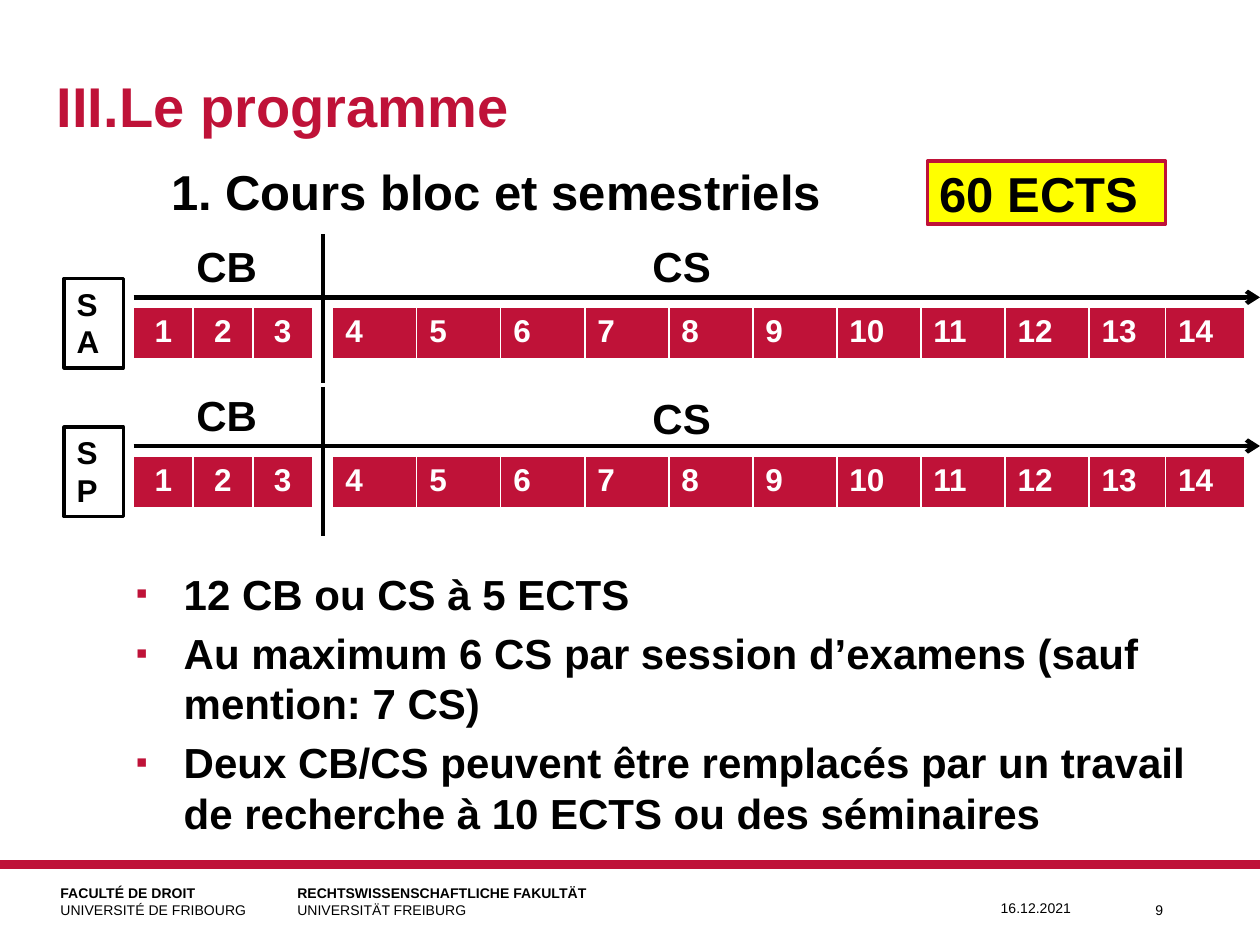
from lxml import etree
from pptx import Presentation
from pptx import util as u
from pptx.dml import color
from pptx.enum import shapes, text
from pptx.oxml import ns

RED, BLACK, WHITE, YELLOW = "BF1238", "000000", "FFFFFF", "FFFF00"


def rgb(value):
    return color.RGBColor.from_string(value)


def box(at):
    return [u.Inches(length) for length in at]


def add_child(parent, tag, **attributes):
    return etree.SubElement(parent, ns.qn(tag), **attributes)


def set_font(font, size, bold=True, ink=BLACK):
    font.name, font.size, font.bold = "Arial", u.Pt(size), bold
    font.color.rgb = rgb(ink)


def write(frame, words, size, bold=True, ink=BLACK,
          align=text.PP_ALIGN.LEFT, anchor=text.MSO_ANCHOR.TOP):
    frame.word_wrap = True
    frame.auto_size = text.MSO_AUTO_SIZE.NONE
    frame.vertical_anchor = anchor
    paragraph = frame.paragraphs[0]
    paragraph.text = words
    paragraph.alignment = align
    set_font(paragraph.font, size, bold, ink)


def add_text(slide, at, words, size, **style):
    shape = slide.shapes.add_textbox(*box(at))
    write(shape.text_frame, words, size, **style)


def add_box(slide, at, words, size, fill, line, **style):
    shape = slide.shapes.add_shape(shapes.MSO_SHAPE.RECTANGLE, *box(at))
    shape.shadow.inherit = False
    shape.fill.solid()
    shape.fill.fore_color.rgb = rgb(fill)
    shape.line.color.rgb = rgb(line)
    shape.line.width = u.Pt(2)
    write(shape.text_frame, words, size, **style)


def add_line(slide, start, end, width, ink=BLACK, arrow=False):
    line = slide.shapes.add_connector(
        shapes.MSO_CONNECTOR.STRAIGHT, *box(start + end))
    line.line.color.rgb = rgb(ink)
    line.line.width = u.Pt(width)
    if arrow:
        add_child(line.line._get_or_add_ln(), "a:tailEnd", type="arrow")
    add_child(line._element.spPr, "a:effectLst")


def add_weeks(slide, at, weeks, align=text.PP_ALIGN.LEFT):
    """Add a one-row table of week numbers."""
    table = slide.shapes.add_table(1, len(weeks), *box(at)).table
    for column, week in enumerate(weeks):
        cell = table.cell(0, column)
        cell.fill.solid()
        cell.fill.fore_color.rgb = rgb(RED)
        paragraph = cell.text_frame.paragraphs[0]
        paragraph.text = str(week)
        paragraph.alignment = align
        set_font(paragraph.font, 18, ink=WHITE)


def add_semester(slide, name, top, divider_top):
    """Add a time line: block courses left of the divider, semester courses right."""
    axis, weeks_top = top + 0.5, top + 0.58
    add_box(slide, (0.51, top + 0.35, 0.47, 0.71), name, 18, WHITE, BLACK)
    add_weeks(slide, (1.06, weeks_top, 1.42, 0.41), range(1, 4),
              text.PP_ALIGN.CENTER)
    add_weeks(slide, (2.64, weeks_top, 6.67, 0.41), range(4, 14))
    add_weeks(slide, (9.25, weeks_top, 0.63, 0.41), [14])
    add_text(slide, (1.46, top, 1.02, 0.5), "CB", 24)
    add_text(slide, (5.08, divider_top, 0.71, 0.5), "CS", 24)
    add_line(slide, (1.06, axis), (10, axis), 2.5, arrow=True)
    add_line(slide, (2.56, divider_top), (2.56, divider_top + 1.18), 2.25)


def add_bullet(slide, at, words):
    frame = slide.shapes.add_textbox(*box(at)).text_frame
    properties = frame.paragraphs[0]._p.get_or_add_pPr()
    indent = u.Inches(0.38)
    properties.set("marL", str(indent))
    properties.set("indent", str(-indent))
    add_child(add_child(properties, "a:buClr"), "a:srgbClr", val=RED)
    add_child(properties, "a:buSzPct", val="80000")
    add_child(properties, "a:buFont", typeface="Arial")
    add_child(properties, "a:buChar", char="▪")
    write(frame, words, 24)


def add_institution(slide, at, faculty, university):
    frame = slide.shapes.add_textbox(*box(at)).text_frame
    frame.word_wrap = True
    frame.vertical_anchor = text.MSO_ANCHOR.BOTTOM
    frame.margin_left = frame.margin_right = 0
    frame.margin_top = frame.margin_bottom = 0
    paragraph = frame.paragraphs[0]
    paragraph.line_spacing = u.Pt(9.6)
    set_font(paragraph.font, 8, bold=False)
    run = paragraph.add_run()
    run.text = faculty
    set_font(run.font, 8)
    paragraph.add_line_break()
    run = paragraph.add_run()
    run.text = university
    set_font(run.font, 8, bold=False)


def add_footer(slide):
    add_line(slide, (0, 6.86), (10, 6.86), 5, RED)
    add_institution(slide, (0.48, 6.94, 1.69, 0.35),
                    "FACULTÉ DE DROIT", "UNIVERSITÉ DE FRIBOURG")
    add_institution(slide, (2.36, 6.9, 2.64, 0.39),
                    "RECHTSWISSENSCHAFTLICHE FAKULTÄT", "UNIVERSITÄT FREIBURG")
    add_text(slide, (7.44, 7.09, 1.16, 0.4), "16.12.2021", 8, bold=False,
             align=text.PP_ALIGN.RIGHT)
    add_text(slide, (8.75, 7.02, 0.58, 0.4), "9", 8, bold=False,
             align=text.PP_ALIGN.RIGHT, anchor=text.MSO_ANCHOR.MIDDLE)


def add_title(slide, at, words):
    title = slide.shapes.title
    title.left, title.top, title.width, title.height = box(at)
    write(title.text_frame, words, 32, ink=RED, anchor=text.MSO_ANCHOR.MIDDLE)


def main():
    presentation = Presentation()
    presentation.slide_width = u.Inches(10)
    presentation.slide_height = u.Inches(7.5)
    slide = presentation.slides.add_slide(presentation.slide_layouts[5])

    add_title(slide, (0.35, 0.44, 10, 0.79), "III.\tLe programme")
    add_footer(slide)
    add_text(slide, (1.26, 1.23, 6, 0.55), "1. Cours bloc et semestriels", 28)
    add_box(slide, (7.36, 1.28, 1.89, 0.5), "60 ECTS", 28, YELLOW, RED,
            anchor=text.MSO_ANCHOR.MIDDLE)

    add_semester(slide, "SA", 1.86, 1.86)
    add_semester(slide, "SP", 3.04, 3.07)

    add_bullet(slide, (0.98, 4.46, 8.58, 0.55), "12 CB ou CS à 5 ECTS")
    add_bullet(slide, (0.98, 4.93, 9.02, 0.94),
               "Au maximum 6 CS par session d’examens (sauf mention: 7 CS)")
    add_bullet(slide, (0.98, 5.8, 8.82, 0.94),
               "Deux CB/CS peuvent être remplacés par un travail "
               "de recherche à 10 ECTS ou des séminaires")

    presentation.save("out.pptx")


if __name__ == "__main__":
    main()
